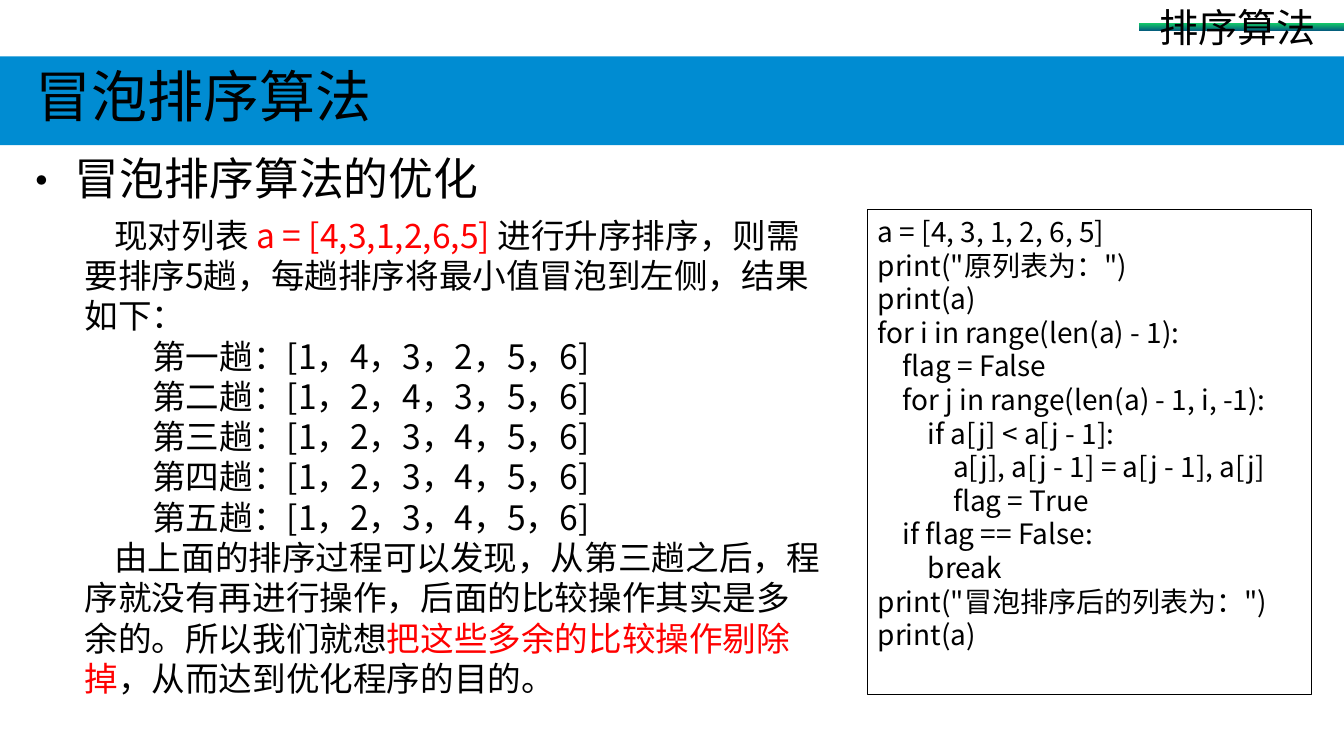
from dataclasses import dataclass

from lxml.etree import SubElement
from pptx import Presentation
from pptx.dml.color import RGBColor
from pptx.enum.shapes import MSO_SHAPE
from pptx.enum.text import MSO_ANCHOR, MSO_AUTO_SIZE, PP_ALIGN
from pptx.oxml.ns import qn
from pptx.util import Cm, Pt


@dataclass(frozen=True)
class Theme:
    black = RGBColor(0x00, 0x00, 0x00)
    red = RGBColor(0xFF, 0x00, 0x00)
    blue = RGBColor(0x00, 0x8C, 0xD2)
    green = RGBColor(0x14, 0xCD, 0x68)
    teal = RGBColor(0x03, 0x5C, 0x7D)
    latin_font = "Calibri"
    chinese_font = "Noto Sans CJK SC"
    title_size = 40
    heading_size = 32
    tag_size = 28
    body_size = 24
    code_size = 20


theme = Theme()


def style_paragraph(paragraph, size, font_name):
    paragraph.alignment = PP_ALIGN.LEFT
    paragraph.line_spacing = Pt(1.2 * size)
    paragraph.space_before = Pt(0)
    paragraph.font.size = Pt(size)
    paragraph.font.name = font_name
    paragraph.font.color.rgb = theme.black
    east_asian = SubElement(paragraph.font._element, qn("a:ea"))
    east_asian.set("typeface", theme.chinese_font)


def prepare_frame(shape, anchor=MSO_ANCHOR.TOP):
    frame = shape.text_frame
    frame.word_wrap = True
    frame.auto_size = MSO_AUTO_SIZE.NONE
    frame.vertical_anchor = anchor
    return frame


presentation = Presentation()
presentation.slide_width = Cm(33.87)
presentation.slide_height = Cm(19.05)
slide = presentation.slides.add_slide(presentation.slide_layouts[5])
shapes = slide.shapes

# Blue band, placed behind the title
band = shapes.add_shape(MSO_SHAPE.RECTANGLE, 0, Cm(1.42), presentation.slide_width, Cm(2.24))
band.shadow.inherit = False
band.fill.solid()
band.fill.fore_color.rgb = theme.blue
band.line.fill.background()
shapes._spTree.insert(2, band._element)

# Title
title = shapes.title
title.left, title.top, title.width, title.height = 0, Cm(1.42), Cm(19.74), Cm(1.96)
frame = prepare_frame(title)
frame.margin_left = Cm(0.9)
frame.text = "冒泡排序算法"
style_paragraph(frame.paragraphs[0], theme.title_size, theme.latin_font)

# Bulleted heading
heading = shapes.add_textbox(0, Cm(3.68), Cm(12.55), Cm(1.63))
frame = prepare_frame(heading)
frame.text = "冒泡排序算法的优化"
paragraph = frame.paragraphs[0]
properties = paragraph._p.get_or_add_pPr()
properties.set("marL", str(Cm(1.64)))
properties.set("indent", str(Cm(-1.39)))
SubElement(properties, qn("a:buFont")).set("typeface", theme.chinese_font)
SubElement(properties, qn("a:buChar")).set("char", "·")
style_paragraph(paragraph, theme.heading_size, theme.latin_font)

# Chapter tag on a gradient bar
tag = shapes.add_shape(MSO_SHAPE.RECTANGLE, Cm(28.7), Cm(0.58), Cm(5.16), Cm(0.2))
tag.shadow.inherit = False
tag.line.fill.background()
tag.fill.gradient()
tag.fill.gradient_angle = 270
for stop, position, color in zip(tag.fill.gradient_stops, (0, 1), (theme.green, theme.teal)):
    stop.position = position
    stop.color.rgb = color
frame = prepare_frame(tag, MSO_ANCHOR.MIDDLE)
frame.margin_left = Cm(0.51)
frame.margin_top = frame.margin_bottom = 0
frame.text = "排序算法"
style_paragraph(frame.paragraphs[0], theme.tag_size, theme.latin_font)

# Explanation: first-line indent and runs (text, highlighted) of each paragraph
passes = {
    "一": (1, 4, 3, 2, 5, 6),
    "二": (1, 2, 4, 3, 5, 6),
    "三": (1, 2, 3, 4, 5, 6),
    "四": (1, 2, 3, 4, 5, 6),
    "五": (1, 2, 3, 4, 5, 6),
}
explanation_paragraphs = [
    (0.75, [
        ("现对列表 ", False),
        ("a = [4,3,1,2,6,5] ", True),
        ("进行升序排序，则需要排序5趟，每趟排序将最小值冒泡到左侧，结果如下：", False),
    ]),
    *[
        (1.71, [(f"第{number}趟：[{'，'.join(map(str, values))}]", False)])
        for number, values in passes.items()
    ],
    (0.75, [
        ("由上面的排序过程可以发现，从第三趟之后，程序就没有再进行操作，"
         "后面的比较操作其实是多余的。所以我们就想", False),
        ("把这些多余的比较操作剔除掉", True),
        ("，从而达到优化程序的目的。", False),
    ]),
]
explanation = shapes.add_textbox(Cm(1.88), Cm(5.28), Cm(19.08), Cm(12.57))
frame = prepare_frame(explanation)
for index, (indent, runs) in enumerate(explanation_paragraphs):
    paragraph = frame.add_paragraph() if index else frame.paragraphs[0]
    paragraph._p.get_or_add_pPr().set("indent", str(Cm(indent)))
    style_paragraph(paragraph, theme.body_size, theme.chinese_font)
    for text, highlighted in runs:
        run = paragraph.add_run()
        run.text = text
        if highlighted:
            run.font.color.rgb = theme.red

# Code listing
code = """a = [4, 3, 1, 2, 6, 5]
print("原列表为：")
print(a)
for i in range(len(a) - 1):
    flag = False
    for j in range(len(a) - 1, i, -1):
        if a[j] < a[j - 1]:
            a[j], a[j - 1] = a[j - 1], a[j]
            flag = True
    if flag == False:
        break
print("冒泡排序后的列表为：")
print(a)"""
code_box = shapes.add_shape(MSO_SHAPE.RECTANGLE, Cm(21.87), Cm(5.28), Cm(11.18), Cm(12.22))
code_box.shadow.inherit = False
code_box.fill.background()
code_box.line.color.rgb = theme.black
code_box.line.width = Pt(1)
frame = prepare_frame(code_box)
frame.text = code
for paragraph in frame.paragraphs:
    style_paragraph(paragraph, theme.code_size, theme.chinese_font)

presentation.save("out.pptx")
